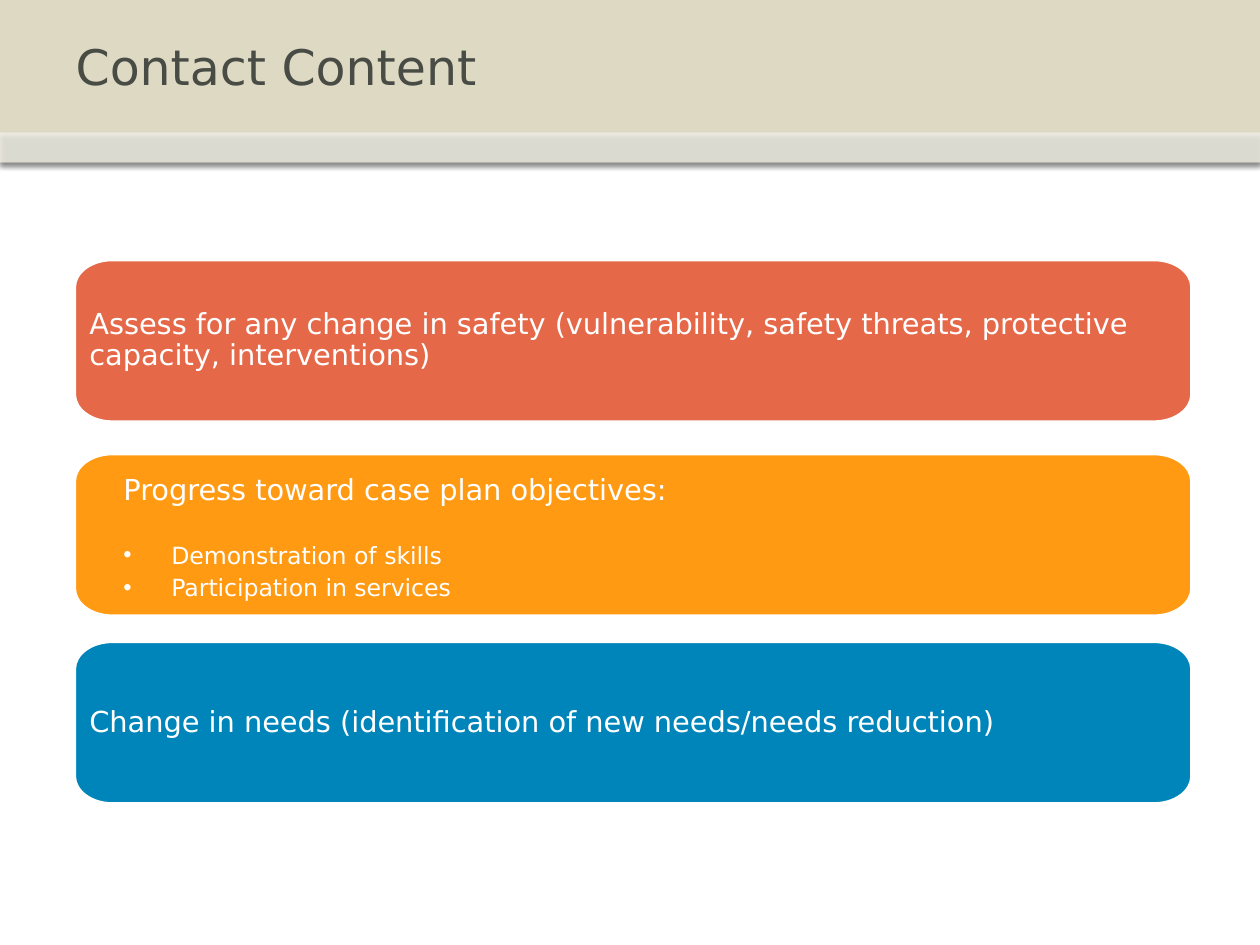
import lxml.etree
import pptx
import pptx.dml.color
import pptx.enum.shapes
import pptx.enum.text
import pptx.oxml
import pptx.oxml.ns
import pptx.util

Inches = pptx.util.Inches
Pt = pptx.util.Pt
qn = pptx.oxml.ns.qn

COLORS = {
    "band": "DDD9C3",
    "title": "484C45",
    "white": "FFFFFF",
    "safety": "E56849",
    "progress": "FF9A12",
    "needs": "0085BA",
}


def rgb(name):
    return pptx.dml.color.RGBColor.from_string(COLORS[name])


def add_text(tf, text, first=False, size=16.5, color="white", spacing=1.0,
             before=0, bullet=None, indent=0):
    p = tf.paragraphs[0] if first else tf.add_paragraph()
    pPr = p._p.get_or_add_pPr()
    pPr.set("marL", str(Inches(indent)))
    pPr.set("indent", str(-Inches(indent)))
    p.alignment = pptx.enum.text.PP_ALIGN.LEFT
    p.line_spacing = spacing
    p.space_before = Pt(before)
    p.space_after = Pt(0)
    if bullet:
        lxml.etree.SubElement(pPr, qn("a:buChar")).set("char", bullet)
    else:
        lxml.etree.SubElement(pPr, qn("a:buNone"))
    r = p.add_run()
    r.text = text
    r.font.size = Pt(size)
    r.font.name = "DejaVu Sans"
    r.font.color.rgb = rgb(color)


def round_corners(sp, bend=0.55):
    points = list(sp.element.iter(qn("a:pt")))
    for i in range(0, len(points), 2):
        start, end = [(int(pt.get("x")), int(pt.get("y"))) for pt in points[i:i + 2]]
        corner = (start[0], end[1]) if i % 4 == 0 else (end[0], start[1])
        curve = points[i + 1].getparent()
        curve.tag = qn("a:cubicBezTo")
        for n, origin in enumerate((start, end)):
            x, y = [round(o + bend * (c - o)) for o, c in zip(origin, corner)]
            control = lxml.etree.Element(qn("a:pt"))
            control.set("x", str(x))
            control.set("y", str(y))
            curve.insert(n, control)


class SlideBuilder:
    """Holds the style and the current slide, and draws each kind of element."""

    left, width, height = 0.59, 8.87, 1.29
    radius_x, radius_y = 0.3, 0.22

    def __init__(self, slide):
        self.s = slide

    def band(self, top, height, color, opacity=100):
        sp = self.s.shapes.add_shape(
            pptx.enum.shapes.MSO_SHAPE.RECTANGLE,
            0, Inches(top), Inches(10), Inches(height))
        sp.fill.solid()
        sp.fill.fore_color.rgb = rgb(color)
        sp.line.fill.background()
        if opacity < 100:
            clr = sp.element.spPr.find(".//" + qn("a:srgbClr"))
            lxml.etree.SubElement(clr, qn("a:alpha")).set("val", str(opacity * 1000))
        sp.element.spPr.append(pptx.oxml.parse_xml(
            '<a:effectLst xmlns:a="http://schemas.openxmlformats.org/drawingml/2006/main">'
            f'<a:outerShdw blurRad="{Pt(3.1)}" dist="{Pt(1.8)}" dir="5400000" rotWithShape="0">'
            '<a:srgbClr val="000000"><a:alpha val="35000"/></a:srgbClr>'
            '</a:outerShdw></a:effectLst>'))

    def placeholder(self, sp, left, top, width, height, inset_x=0.1, inset_y=0.05):
        sp.element.getparent().append(sp.element)
        sp.left, sp.top = Inches(left), Inches(top)
        sp.width, sp.height = Inches(width), Inches(height)
        return self.frame(sp, inset_x, inset_y)

    def frame(self, sp, inset_x, inset_y):
        tf = sp.text_frame
        tf.word_wrap = True
        tf.auto_size = pptx.enum.text.MSO_AUTO_SIZE.NONE
        tf.vertical_anchor = pptx.enum.text.MSO_ANCHOR.MIDDLE
        tf.margin_left = tf.margin_right = Inches(inset_x)
        tf.margin_top = tf.margin_bottom = Inches(inset_y)
        return tf

    def title(self, text):
        tf = self.placeholder(self.s.shapes.title, 0.5, 0, 9, 1.05)
        add_text(tf, text, first=True, size=28, color="title")

    def card(self, top, color, text=None):
        rx, ry, left = self.radius_x, self.radius_y, self.left
        right, bottom = left + self.width, top + self.height
        outline = [(left, top + ry), (left + rx, top), (right - rx, top), (right, top + ry),
                   (right, bottom - ry), (right - rx, bottom), (left + rx, bottom),
                   (left, bottom - ry)]
        points = [(Inches(x), Inches(y)) for x, y in outline]
        builder = self.s.shapes.build_freeform(*points[0])
        builder.add_line_segments(points[1:], close=True)
        sp = builder.convert_to_shape()
        round_corners(sp)
        sp.shadow.inherit = False
        sp.fill.solid()
        sp.fill.fore_color.rgb = rgb(color)
        sp.line.color.rgb = rgb("white")
        sp.line.width = Pt(2)
        if text:
            add_text(self.frame(sp, 0.12, 0.12), text, first=True, spacing=0.9)

    def bullets(self, heading, items):
        tf = self.placeholder(self.s.placeholders[1], 0.91, 3.68, 8.59, 1.13, 0.07, 0.04)
        add_text(tf, heading, first=True, spacing=1.1)
        for i, item in enumerate(items):
            add_text(tf, item, size=13.5, spacing=1.1, before=1 if i else 18,
                     bullet="•", indent=0.38)


def main():
    prs = pptx.Presentation()
    prs.slide_width, prs.slide_height = Inches(10), Inches(7.5)
    b = SlideBuilder(prs.slides.add_slide(prs.slide_layouts[1]))
    b.band(0, 1.29, "band")
    b.band(1.05, 0.24, "white", opacity=53)
    b.title("Contact Content")
    b.card(2.06, "safety", "Assess for any change in safety (vulnerability, safety threats, "
                           "protective capacity, interventions)")
    b.card(3.6, "progress")
    b.card(5.09, "needs", "Change in needs (identification of new needs/needs reduction)")
    b.bullets("Progress toward case plan objectives:",
              ["Demonstration of skills", "Participation in services"])
    prs.save("out.pptx")


if __name__ == "__main__":
    main()
